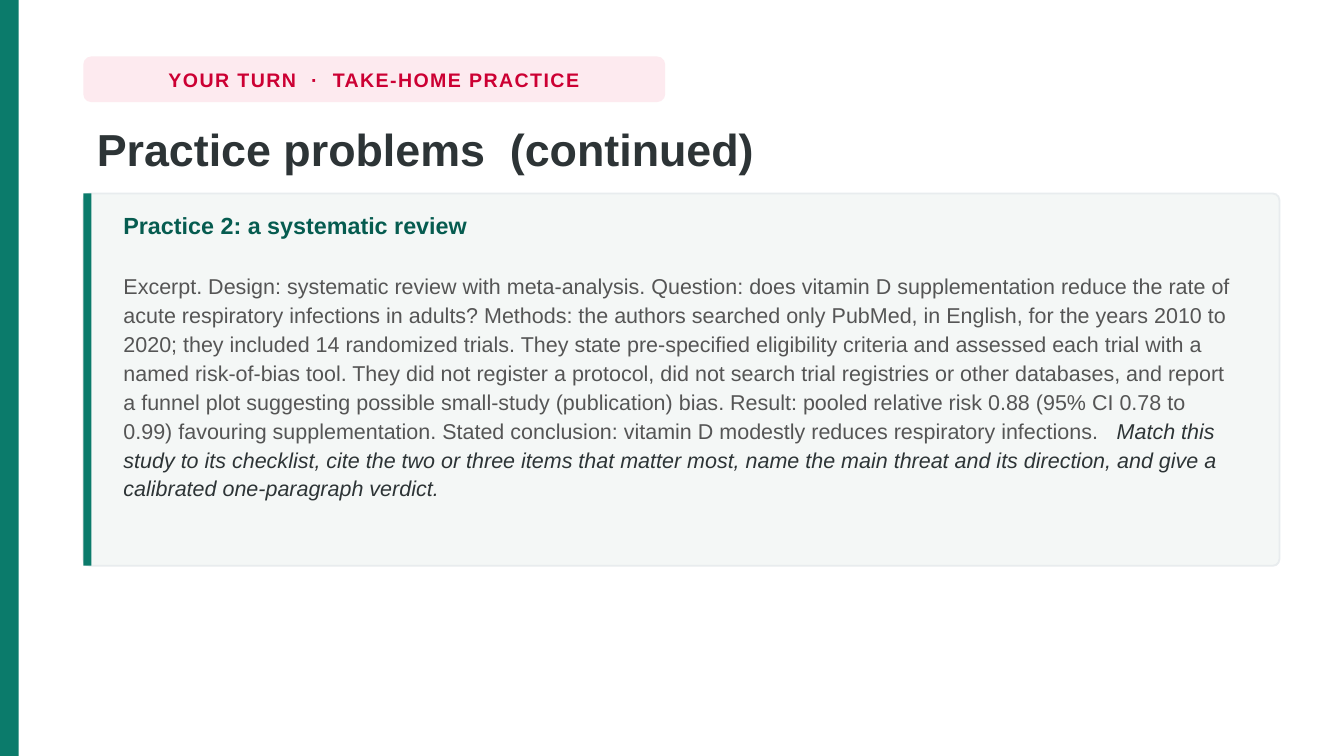
from pptx import Presentation
from pptx.dml.color import RGBColor
from pptx.enum.shapes import MSO_SHAPE
from pptx.enum.text import MSO_ANCHOR, MSO_AUTO_SIZE, PP_ALIGN
from pptx.util import Inches, Pt

# Content
EYEBROW = "YOUR TURN  ·  TAKE-HOME PRACTICE"
TITLE = "Practice problems  (continued)"
HEADING = "Practice 2: a systematic review"
EXCERPT = (
    "Excerpt. Design: systematic review with meta-analysis. Question: does vitamin D "
    "supplementation reduce the rate of acute respiratory infections in adults? Methods: "
    "the authors searched only PubMed, in English, for the years 2010 to 2020; they "
    "included 14 randomized trials. They state pre-specified eligibility criteria and "
    "assessed each trial with a named risk-of-bias tool. They did not register a protocol, "
    "did not search trial registries or other databases, and report a funnel plot "
    "suggesting possible small-study (publication) bias. Result: pooled relative risk 0.88 "
    "(95% CI 0.78 to 0.99) favouring supplementation. Stated conclusion: vitamin D modestly "
    "reduces respiratory infections.   "
)
TASK = (
    "Match this study to its checklist, cite the two or three items that matter most, name "
    "the main threat and its direction, and give a calibrated one-paragraph verdict."
)

# Format values
COLORS = {
    "teal": "0B7B6B", "dark_teal": "065C50", "blush": "FDEAEF", "red": "CC0033",
    "ink": "2D3436", "grey": "555555", "panel": "F4F7F6", "border": "E8ECEE",
}
FORMATS = {
    "eyebrow": {"size": Pt(10.5), "bold": True, "color": "red"},
    "title": {"size": Pt(24), "bold": True, "color": "ink"},
    "heading": {"size": Pt(12.5), "bold": True, "color": "dark_teal"},
    "excerpt": {"size": Pt(11.5), "bold": False, "color": "grey"},
    "task": {"size": Pt(11.5), "bold": False, "italic": True, "color": "ink"},
}

# Layout in inches, on a 16:9 slide
WIDTH = 10
HEIGHT = WIDTH * 9 / 16
LEFT, CONTENT_WIDTH = 0.62, 8.9
CARD_TOP, CARD_HEIGHT = 1.44, 2.77
CARD_PAD_X, CARD_PAD_Y = 0.2, 0.08
TITLE_BOX = (LEFT, 0.84, CONTENT_WIDTH, 0.56)
EYEBROW_BOX = (LEFT, 0.42, 4.33, 0.34)
CARD_BOX = (LEFT, CARD_TOP, CONTENT_WIDTH, CARD_HEIGHT)
CARD_TEXT_BOX = (LEFT + CARD_PAD_X, CARD_TOP + CARD_PAD_Y,
                 8.48, CARD_HEIGHT - 2 * CARD_PAD_Y)


def rgb(name):
    return RGBColor.from_string(COLORS[name])


def add_block(slide, kind, box, fill, border=None, corner=None):
    block = slide.shapes.add_shape(kind, *map(Inches, box))
    block.shadow.inherit = False
    block.fill.solid()
    block.fill.fore_color.rgb = rgb(fill)
    if border:
        block.line.color.rgb = rgb(border)
        block.line.width = Pt(1)
    else:
        block.line.fill.background()
    if corner is not None:
        block.adjustments[0] = corner
    return block


def add_run(paragraph, text, style):
    run = paragraph.add_run()
    run.text = text
    run.font.name = "Arial"
    for key, value in FORMATS[style].items():
        if key == "color":
            run.font.color.rgb = rgb(value)
        else:
            setattr(run.font, key, value)
    return run


def main():
    prs = Presentation()
    prs.slide_width, prs.slide_height = Inches(WIDTH), Inches(HEIGHT)
    slide = prs.slides.add_slide(prs.slide_layouts.get_by_name("Title Only"))

    # Side band
    add_block(slide, MSO_SHAPE.RECTANGLE, (0, 0, 0.14, HEIGHT), "teal")

    # Eyebrow pill
    eyebrow = add_block(slide, MSO_SHAPE.ROUNDED_RECTANGLE, EYEBROW_BOX, "blush", corner=0.176)
    eyebrow.text_frame.word_wrap = False
    eyebrow.text_frame.vertical_anchor = MSO_ANCHOR.MIDDLE
    label = eyebrow.text_frame.paragraphs[0]
    label.alignment = PP_ALIGN.CENTER
    add_run(label, EYEBROW, "eyebrow")._r.get_or_add_rPr().set("spc", "80")

    # Title
    title = slide.shapes.title
    title.left, title.top, title.width, title.height = map(Inches, TITLE_BOX)
    title.text_frame.auto_size = MSO_AUTO_SIZE.NONE
    title.text_frame.vertical_anchor = MSO_ANCHOR.TOP
    title.text_frame.margin_top = Inches(0.06)
    headline = title.text_frame.paragraphs[0]
    headline.alignment = PP_ALIGN.LEFT
    headline.line_spacing = 1.02
    add_run(headline, TITLE, "title")

    # Practice card with accent edge
    add_block(slide, MSO_SHAPE.ROUNDED_RECTANGLE, CARD_BOX, "panel", "border", 0.018)
    add_block(slide, MSO_SHAPE.RECTANGLE, (LEFT, CARD_TOP, 0.06, CARD_HEIGHT), "teal")

    # Practice text
    practice = slide.shapes.add_textbox(*map(Inches, CARD_TEXT_BOX)).text_frame
    practice.word_wrap = True
    practice.margin_top = Inches(0.03)
    heading, problem = practice.paragraphs[0], practice.add_paragraph()
    heading.line_spacing = problem.line_spacing = 1.12
    heading.space_after = Pt(16.5)
    add_run(heading, HEADING, "heading")
    add_run(problem, EXCERPT, "excerpt")
    add_run(problem, TASK, "task")

    prs.save("out.pptx")


if __name__ == "__main__":
    main()
